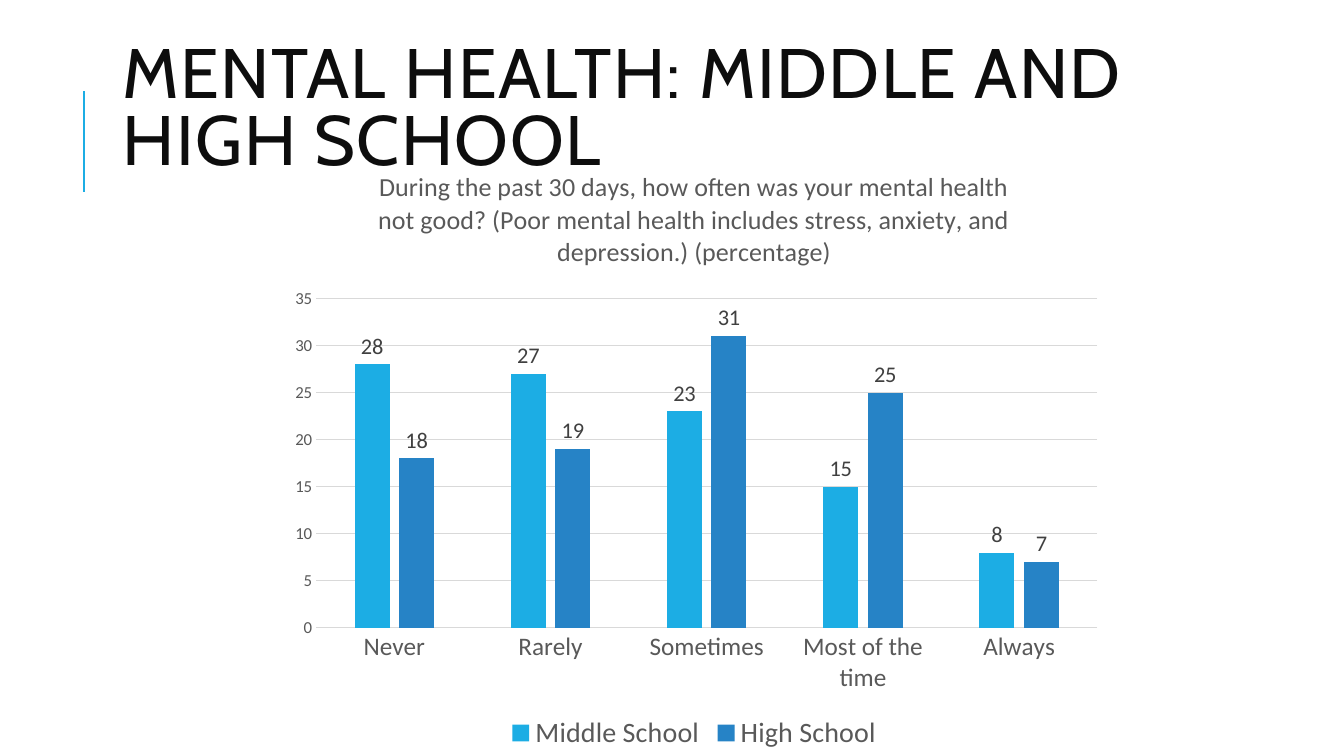
import pptx
import pptx.chart.data
import pptx.dml.color
import pptx.enum.chart
import pptx.enum.shapes
import pptx.enum.text
import pptx.oxml
import pptx.oxml.ns
import pptx.util
from dataclasses import dataclass

Inches = pptx.util.Inches
Pt = pptx.util.Pt


@dataclass(frozen=True)
class Theme:
    heading_font: str = "Cabin"
    body_font: str = "Calibri"
    ink: str = "0D0D0D"
    label: str = "404040"
    muted: str = "595959"
    grid: str = "D9D9D9"
    accent: str = "1CADE4"
    series: tuple = ("1CADE4", "2683C6")
    heading_size: float = 50
    question_size: float = 18.6
    legend_size: float = 20
    category_size: float = 18
    label_size: float = 16
    value_size: float = 12


def rgb(color):
    return pptx.dml.color.RGBColor.from_string(color)


class SlideBuilder:
    def __init__(self, slide, theme):
        self.slide = slide
        self.theme = theme

    def style(self, font, size, color, name=None):
        font.size = Pt(size)
        font.name = name or self.theme.body_font
        font.bold = False
        font.color.rgb = rgb(color)

    def rule(self, x, top, bottom):
        line = self.slide.shapes.add_connector(
            pptx.enum.shapes.MSO_CONNECTOR.STRAIGHT,
            Inches(x), Inches(bottom), Inches(x), Inches(top))
        line.line.color.rgb = rgb(self.theme.accent)
        line.line.width = Pt(1.5)
        line._element.spPr.append(pptx.oxml.parse_xml(
            f'<a:effectLst {pptx.oxml.ns.nsdecls("a")}/>'))

    def heading(self, text, left, top, width, height):
        box = self.slide.shapes.add_textbox(
            Inches(left), Inches(top), Inches(width), Inches(height))
        frame = box.text_frame
        frame.word_wrap = True
        frame.vertical_anchor = pptx.enum.text.MSO_ANCHOR.MIDDLE
        para = frame.paragraphs[0]
        para.line_spacing = 0.8
        self.style(para.font, self.theme.heading_size, self.theme.ink,
                   self.theme.heading_font)
        span = para.add_run()
        span.text = text
        # Letter spacing in hundredths of a point
        span._r.get_or_add_rPr().set("spc", "100")

    def column_chart(self, question, categories, groups, left, top, width, height):
        theme = self.theme
        data = pptx.chart.data.CategoryChartData()
        data.categories = categories
        for name, values in groups.items():
            data.add_series(name, values)
        chart = self.slide.shapes.add_chart(
            pptx.enum.chart.XL_CHART_TYPE.COLUMN_CLUSTERED,
            Inches(left), Inches(top), Inches(width), Inches(height), data).chart
        self.style(chart.font, theme.value_size, theme.muted)

        # Question above the plot
        chart.has_title = True
        para = chart.chart_title.text_frame.paragraphs[0]
        para.text = question
        self.style(para.font, theme.question_size, theme.muted)
        chart.chart_title.include_in_layout = False

        # Legend
        chart.has_legend = True
        chart.legend.position = pptx.enum.chart.XL_LEGEND_POSITION.BOTTOM
        chart.legend.include_in_layout = False
        self.style(chart.legend.font, theme.legend_size, theme.muted)

        # Axes and gridlines
        axes = ((chart.category_axis, theme.category_size),
                (chart.value_axis, theme.value_size))
        for axis, size in axes:
            axis.major_tick_mark = pptx.enum.chart.XL_TICK_MARK.NONE
            axis.minor_tick_mark = pptx.enum.chart.XL_TICK_MARK.NONE
            self.style(axis.tick_labels.font, size, theme.muted)
        chart.value_axis.minimum_scale = 0
        chart.value_axis.maximum_scale = 35
        chart.value_axis.major_unit = 5
        chart.value_axis.format.line.fill.background()
        for line in (chart.category_axis.format.line,
                     chart.value_axis.major_gridlines.format.line):
            line.color.rgb = rgb(theme.grid)
            line.width = Pt(0.75)

        # Columns and their labels
        plot = chart.plots[0]
        plot.vary_by_categories = False
        plot.gap_width = 219
        plot.overlap = -27
        for series, color in zip(plot.series, theme.series):
            series.format.fill.solid()
            series.format.fill.fore_color.rgb = rgb(color)
            labels = series.data_labels
            labels.show_value = True
            labels.position = pptx.enum.chart.XL_LABEL_POSITION.OUTSIDE_END
            self.style(labels.font, theme.label_size, theme.label)
        self.place_plot(chart, x=0.05, y=0.25, w=0.93, h=0.54)

    def place_plot(self, chart, **fractions):
        area = chart._chartSpace.chart.plotArea
        for layout in area.findall(pptx.oxml.ns.qn("c:layout")):
            area.remove(layout)
        sizes = "".join(f'<c:{key} val="{value}"/>'
                        for key, value in fractions.items())
        area.insert(0, pptx.oxml.parse_xml(
            f'<c:layout {pptx.oxml.ns.nsdecls("c")}><c:manualLayout>'
            '<c:layoutTarget val="inner"/><c:xMode val="edge"/>'
            f'<c:yMode val="edge"/>{sizes}</c:manualLayout></c:layout>'))


def main():
    deck = pptx.Presentation()
    deck.slide_width = Inches(13.33)
    deck.slide_height = Inches(7.5)
    page = SlideBuilder(deck.slides.add_slide(deck.slide_layouts[6]), Theme())

    # Heading with its accent rule
    page.rule(0.83, 0.9, 1.9)
    page.heading("MENTAL HEALTH: MIDDLE AND HIGH SCHOOL", 1.12, 0.29, 10.63, 1.64)

    # Survey results
    page.column_chart(
        "During the past 30 days, how often was your mental health not good? "
        "(Poor mental health includes stress, anxiety, and depression.) (percentage)",
        ["Never", "Rarely", "Sometimes", "Most of the time", "Always"],
        {"Middle School": (28, 27, 23, 15, 8), "High School": (18, 19, 31, 25, 7)},
        2.72, 1.45, 8.33, 6.05)

    deck.save("out.pptx")


if __name__ == "__main__":
    main()
